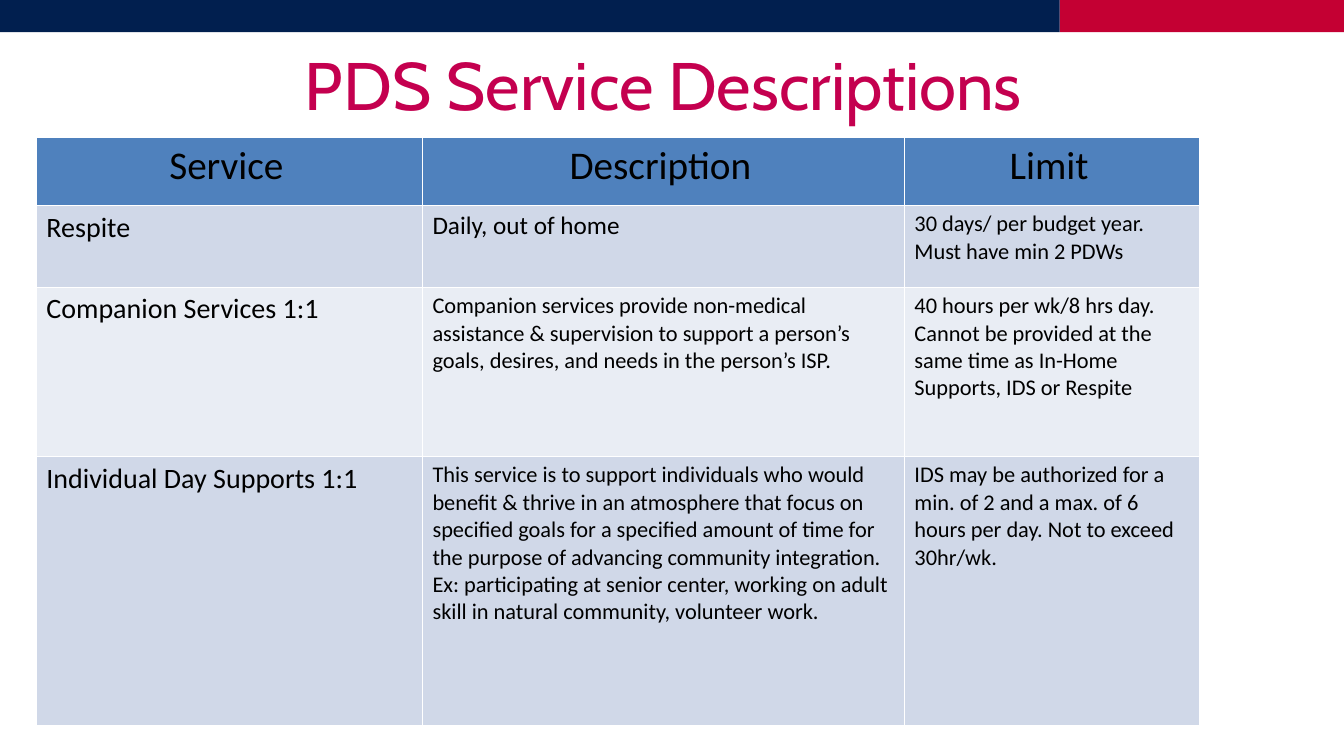
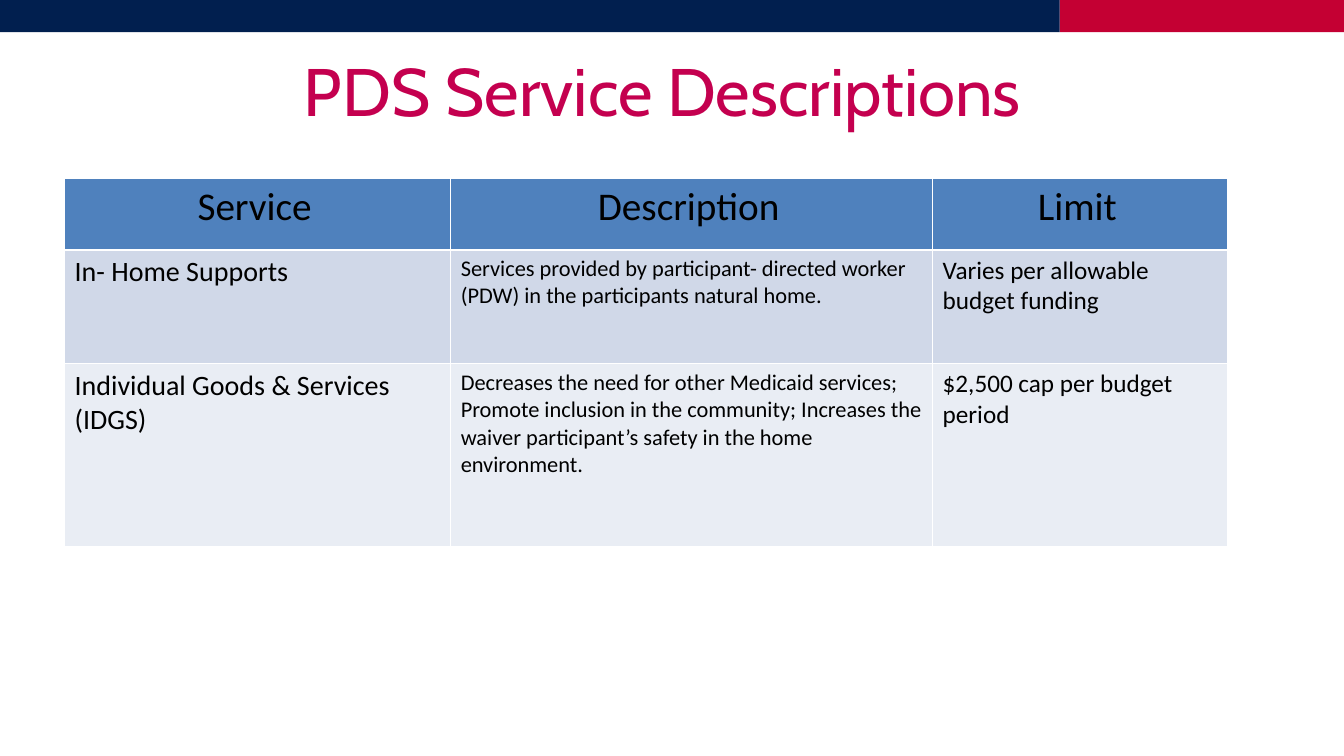
from dataclasses import dataclass

from lxml.etree import SubElement
from pptx import Presentation
from pptx.dml.color import RGBColor
from pptx.enum.shapes import MSO_SHAPE
from pptx.enum.text import MSO_ANCHOR, PP_ALIGN
from pptx.oxml.ns import qn
from pptx.util import Inches, Pt

UNIT = Inches(0.01)
GRID_COLS, GRID_ROWS = 1333, 750


@dataclass(frozen=True)
class Theme:
    """Colours, fonts and type sizes shared by the slides."""

    navy: str = "011F4F"
    red: str = "C40033"
    title: str = "C4004F"
    header: str = "4F81BD"
    bands: tuple = ("D0D8E8", "E9EDF4")
    rule: str = "FFFFFF"
    ink: str = "000000"
    title_font: str = "Cabin"
    body_font: str = "Calibri"
    title_size: int = 48
    title_leading: int = 49
    header_size: int = 28
    large: int = 20
    medium: int = 18
    small: int = 16


@dataclass(frozen=True)
class Box:
    """A rectangle in grid columns and rows."""

    left: int
    top: int
    width: int
    height: int

    def emu(self):
        """Return the rectangle as slide lengths."""
        return [side * UNIT for side in (self.left, self.top, self.width, self.height)]


THEME = Theme()
TOP_BAND = Box(0, 0, GRID_COLS, 32)
NAVY_COLS = 1051
TABLE_COLS = (383, 478, 293)
HEADINGS = ("Service", "Description", "Limit")

SLIDES = (
    {
        "title": Box(258, 55, 800, 65),
        "corner": (36, 136),
        "row_heights": (68, 81, 168, 267),
        "services": (
            (
                ("Respite", THEME.large),
                ("Daily, out of home", THEME.medium),
                ("30 days/ per budget year.\nMust have min 2 PDWs", THEME.small),
            ),
            (
                ("Companion Services 1:1", THEME.large),
                ("Companion services provide non-medical assistance & supervision to "
                 "support a person’s goals, desires, and needs in the person’s ISP.",
                 THEME.small),
                ("40 hours per wk/8 hrs day. Cannot be provided at the same time as "
                 "In-Home Supports, IDS or Respite", THEME.small),
            ),
            (
                ("Individual Day Supports 1:1", THEME.large),
                ("This service is to support individuals who would benefit & thrive in "
                 "an atmosphere that focus on specified goals for a specified amount of "
                 "time for the purpose of advancing community integration. Ex: "
                 "participating at senior center, working on adult skill in natural "
                 "community, volunteer work.", THEME.small),
                ("IDS may be authorized for a min. of 2 and a max. of 6 hours per day. "
                 "Not to exceed 30hr/wk.", THEME.small),
            ),
        ),
    },
    {
        "title": Box(257, 61, 800, 65),
        "corner": (64, 177),
        "row_heights": (71, 113, 181),
        "services": (
            (
                ("In- Home Supports", THEME.large),
                ("Services provided by participant- directed worker (PDW) in the "
                 "participants natural home.", THEME.small),
                ("Varies per allowable budget funding", THEME.medium),
            ),
            (
                ("Individual Goods & Services\n(IDGS)", THEME.large),
                ("Decreases the need for other Medicaid services; Promote inclusion in "
                 "the community; Increases the waiver participant’s safety in the home "
                 "environment.", THEME.small),
                ("$2,500 cap per budget period", THEME.medium),
            ),
        ),
    },
)


def apply_format(target, values):
    """Set each named attribute on the target."""
    for name, value in values.items():
        setattr(target, name, value)


def style_font(font, name, size, color):
    """Give a font its face, size and colour."""
    apply_format(font, {"name": name, "size": Pt(size), "bold": False})
    font.color.rgb = RGBColor.from_string(color)


def add_top_band(slide, box):
    """Split the band across the top into its navy and red parts."""
    parts = (
        (Box(box.left + NAVY_COLS, box.top, box.width - NAVY_COLS, box.height), THEME.red),
        (Box(box.left, box.top, NAVY_COLS, box.height), THEME.navy),
    )
    for part, color in parts:
        band = slide.shapes.add_shape(MSO_SHAPE.RECTANGLE, *part.emu())
        band.shadow.inherit = False
        band.fill.solid()
        band.fill.fore_color.rgb = RGBColor.from_string(color)
        band.line.fill.background()


def add_title(slide, box, wording):
    """Place the centred slide title in its box."""
    frame = slide.shapes.add_textbox(*box.emu()).text_frame
    apply_format(frame, {
        "word_wrap": True,
        "vertical_anchor": MSO_ANCHOR.TOP,
        "margin_left": 0,
        "margin_right": 0,
        "margin_top": 0,
        "margin_bottom": 0,
        "text": wording,
    })
    heading = frame.paragraphs[0]
    apply_format(heading, {
        "alignment": PP_ALIGN.CENTER,
        "line_spacing": Pt(THEME.title_leading),
    })
    style_font(heading.runs[0].font, THEME.title_font, THEME.title_size, THEME.title)


def add_rules(cell):
    """Draw thin rules on all four sides of a table cell."""
    properties = cell._tc.get_or_add_tcPr()
    for side in ("lnL", "lnR", "lnT", "lnB"):
        rule = SubElement(properties, qn(f"a:{side}"), w=str(Pt(1)))
        paint = SubElement(rule, qn("a:solidFill"))
        SubElement(paint, qn("a:srgbClr"), val=THEME.rule)


def fill_cell(cell, wording, size, color, alignment):
    """Write and style one table cell."""
    add_rules(cell)
    cell.fill.solid()
    cell.fill.fore_color.rgb = RGBColor.from_string(color)
    cell.text_frame.text = wording
    for paragraph in cell.text_frame.paragraphs:
        paragraph.alignment = alignment
        for run in paragraph.runs:
            style_font(run.font, THEME.body_font, size, THEME.ink)


def add_service_table(slide, box, row_heights, services):
    """Build the table of services, descriptions and limits in its box."""
    header = tuple((heading, THEME.header_size) for heading in HEADINGS)
    rows = (header, *services)
    table = slide.shapes.add_table(len(rows), len(TABLE_COLS), *box.emu()).table
    for column, width in zip(table.columns, TABLE_COLS):
        column.width = width * UNIT
    for index, (height, entries) in enumerate(zip(row_heights, rows)):
        table.rows[index].height = height * UNIT
        color = THEME.bands[(index - 1) % 2] if index else THEME.header
        alignment = PP_ALIGN.LEFT if index else PP_ALIGN.CENTER
        for cell, (wording, size) in zip(table.rows[index].cells, entries):
            fill_cell(cell, wording, size, color, alignment)
            if not index:
                cell.margin_right = Inches(0.16)


def add_service_slide(deck, content):
    """Add one slide of service descriptions."""
    slide = deck.slides.add_slide(deck.slide_layouts[6])
    heights = content["row_heights"]
    add_top_band(slide, TOP_BAND)
    table_box = Box(*content["corner"], sum(TABLE_COLS), sum(heights))
    add_service_table(slide, table_box, heights, content["services"])
    add_title(slide, content["title"], "PDS Service Descriptions")


def main():
    """Build and save the presentation."""
    deck = Presentation()
    apply_format(deck, {
        "slide_width": GRID_COLS * UNIT,
        "slide_height": GRID_ROWS * UNIT,
    })
    for content in SLIDES:
        add_service_slide(deck, content)
    deck.save("out.pptx")


if __name__ == "__main__":
    main()
